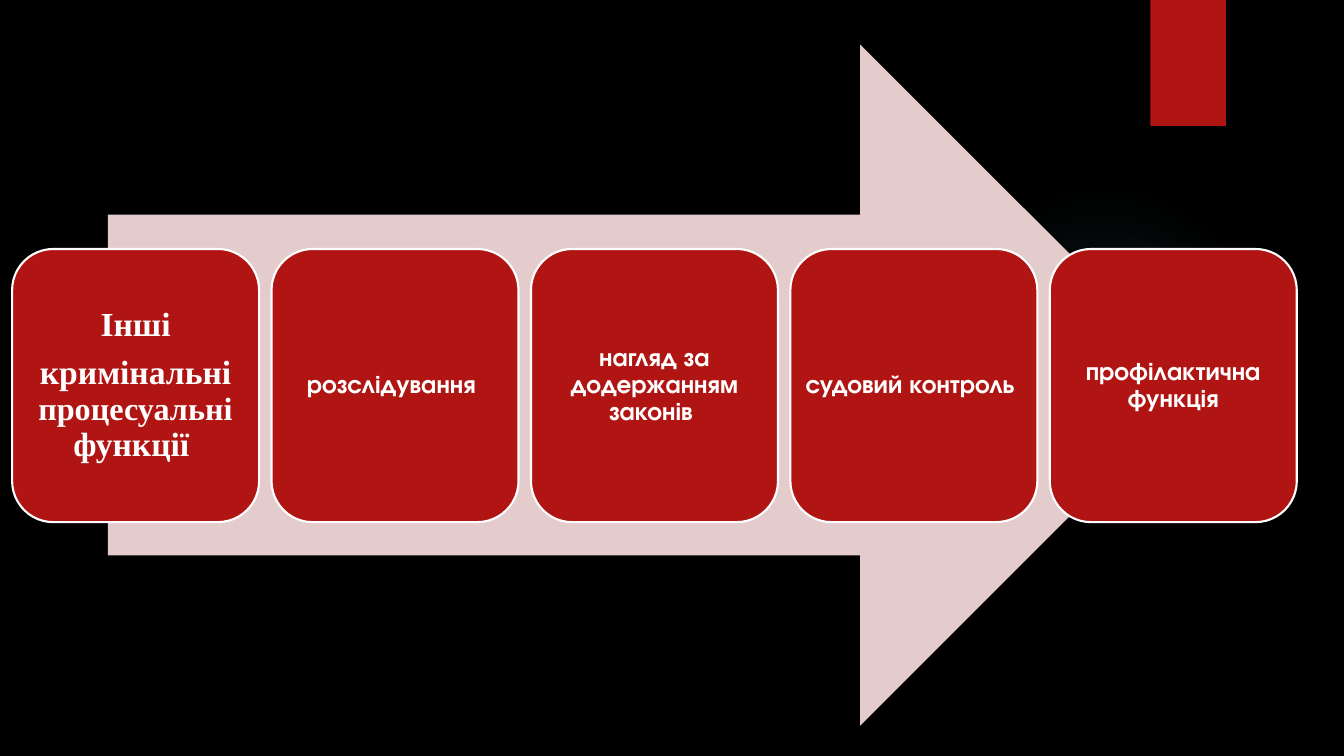
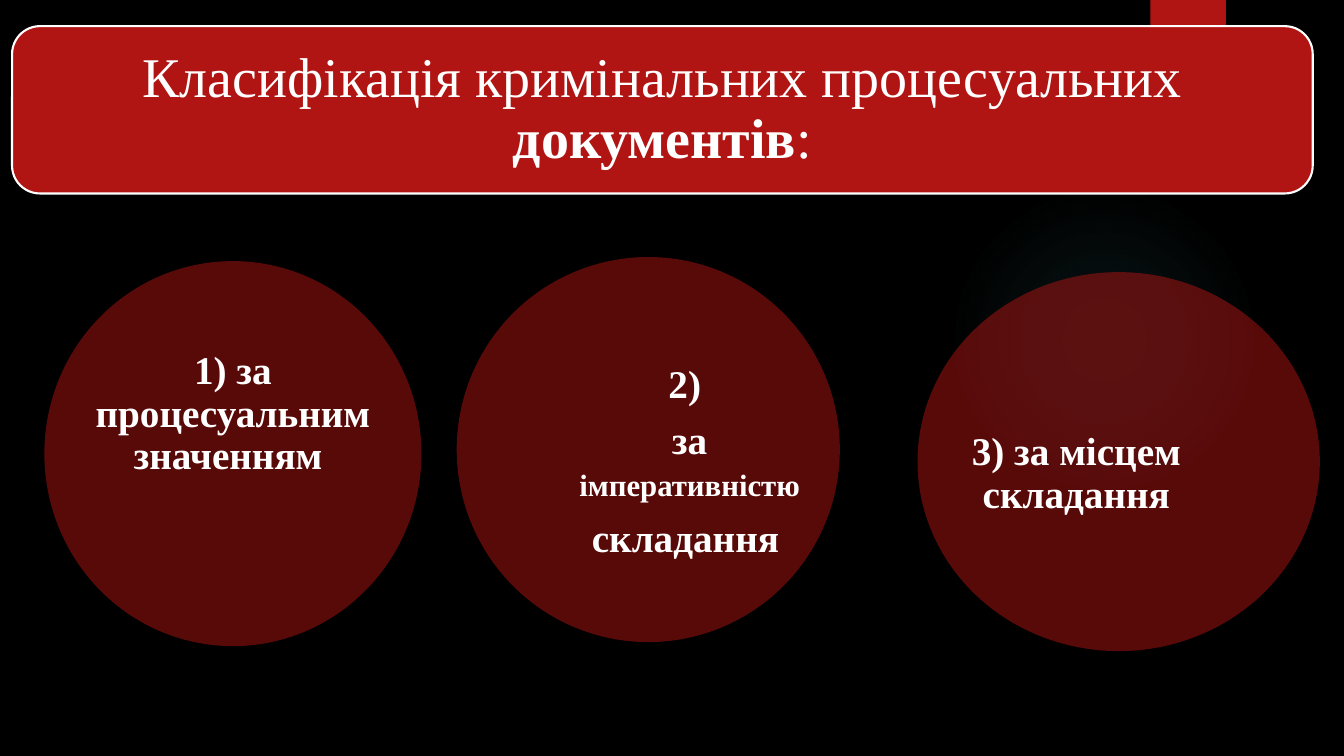
from lxml import etree
from pptx import Presentation
from pptx.dml.color import RGBColor
from pptx.enum.shapes import MSO_SHAPE
from pptx.enum.text import MSO_ANCHOR, MSO_AUTO_SIZE, PP_ALIGN
from pptx.oxml import parse_xml
from pptx.oxml.ns import qn
from pptx.util import Inches, Pt

RECT, ROUND = MSO_SHAPE.RECTANGLE, MSO_SHAPE.ROUNDED_RECTANGLE
OVAL, ARROW = MSO_SHAPE.OVAL, MSO_SHAPE.RIGHT_ARROW
MIDDLE, CENTER, NO_FIT = MSO_ANCHOR.MIDDLE, PP_ALIGN.CENTER, MSO_AUTO_SIZE.NONE

BLACK = RGBColor(0x00, 0x00, 0x00)
WHITE = RGBColor(0xFF, 0xFF, 0xFF)
RED = RGBColor(0xB0, 0x15, 0x13)
PINK = RGBColor(0xE4, 0xCC, 0xCC)
TEAL = RGBColor(0x50, 0xB9, 0xC1)
SERIF, SANS = "Times New Roman", "TeX Gyre Adventor"
NS = 'xmlns:a="http://schemas.openxmlformats.org/drawingml/2006/main"'

# Content: a text is a list of paragraphs, a paragraph a list of (text, size, bold)
STEPS = [
    (SERIF, [[("Інші", 24, True)],
             [("кримінальні ", 24, True), ("процесуальні", 23, True),
              (" функції ", 24, True)]]),
    (SANS, [[("розслідування ", 18, True)]]),
    (SANS, [[("нагляд за додержанням законів ", 18, True)]]),
    (SANS, [[("судовий контроль ", 18, True)]]),
    (SANS, [[("профілактична функція", 18, True)]]),
]
TITLE = [[("Класифікація кримінальних процесуальних ", 40, False),
          ("документів", 40, True), (":", 40, False)]]
# Circle place, text place, text
KINDS = [
    ((0.44, 2.59, 3.74, 3.82), (0.94, 3.25, 2.74, 1.72),
     [[("1) за процесуальним значенням ", 28, True)]]),
    ((4.53, 2.55, 3.8, 3.82), (5.7, 3.54, 2.28, 2.1),
     [[("2) ", 28, True)],
      [("за ", 28, True), ("імперативністю", 22, True), (" ", 28, True)],
      [("складання", 28, True), (" ", 24, True)]]),
    ((9.1, 2.7, 3.99, 3.76), (9.48, 3.67, 2.39, 2.07),
     [[("3) за місцем складання", 28, True)]]),
]
BANNER = (0.12, 0.26, 12.9, 1.66)


def place(box):
    return [Inches(v) for v in box]


def draw(slide, kind, box, color, edge=False):
    shape = slide.shapes.add_shape(kind, *place(box))
    shape.shadow.inherit = False
    shape.fill.solid()
    shape.fill.fore_color.rgb = color
    if edge:
        shape.line.color.rgb = WHITE
        shape.line.width = Pt(1.5)
    else:
        shape.line.fill.background()
    return shape


def write(shape, paras, font, inset=0):
    frame = shape.text_frame
    frame.word_wrap = True
    frame.auto_size = NO_FIT
    frame.vertical_anchor = MIDDLE
    frame.margin_left = frame.margin_right = Inches(inset)
    frame.margin_top = frame.margin_bottom = Inches(inset)
    for i, runs in enumerate(paras):
        para = frame.add_paragraph() if i else frame.paragraphs[0]
        para.alignment = CENTER
        para.line_spacing = 0.9
        para.space_before = Pt(0)
        para.space_after = Pt(round(0.35 * runs[0][1], 1))
        for text, size, bold in runs:
            run = para.add_run()
            run.text = text
            run.font.name = font
            run.font.size = Pt(size)
            run.font.bold = bold
            run.font.color.rgb = WHITE


def fade(shape, percent):
    color = shape.element.spPr.find(qn("a:solidFill"))[0]
    etree.SubElement(color, qn("a:alpha")).set("val", str(percent * 1000))


def dress(master, slide):
    """Put the soft glow and the red tab on the master."""
    glow = draw(slide, OVAL, (9.41, 1.83, 3.08, 3.08), TEAL)
    stops = "".join(
        f'<a:gs pos="{pos * 1000}"><a:srgbClr val="{TEAL}">'
        f'<a:alpha val="{alpha * 1000}"/></a:srgbClr></a:gs>'
        for pos, alpha in ((0, 7), (36, 6), (69, 0), (100, 0)))
    props = glow.element.spPr
    props.replace(props.find(qn("a:solidFill")), parse_xml(
        f'<a:gradFill {NS}><a:gsLst>{stops}</a:gsLst><a:path path="circle">'
        '<a:fillToRect l="50000" t="50000" r="50000" b="50000"/>'
        '</a:path></a:gradFill>'))

    tab = draw(slide, RECT, (11.41, 0, 0.75, 1.25), RED)
    tab.element.spPr.find(qn("a:effectLst")).append(parse_xml(
        f'<a:outerShdw {NS} blurRad="{Pt(3)}" dist="{Pt(2)}" dir="5400000">'
        f'<a:srgbClr val="{BLACK}"><a:alpha val="45000"/></a:srgbClr>'
        '</a:outerShdw>'))

    for num, shape in enumerate((glow, tab), 20):
        shape.element.nvSpPr.cNvPr.set("id", str(num))
        master.shapes.element.append(shape.element)


def steps(slide):
    draw(slide, ARROW, (1.07, 0.44, 10.84, 6.76), PINK)
    for i, (font, paras) in enumerate(STEPS):
        box = (0.12 + i * 2.573, 2.47, 2.45, 2.71)
        write(draw(slide, ROUND, box, RED, edge=True), paras, font)


def kinds(slide):
    # Title over its banner
    draw(slide, ROUND, BANNER, RED, edge=True)
    title = slide.shapes.title
    title.left, title.top, title.width, title.height = place(BANNER)
    write(title, TITLE, SERIF, 0.17)
    slide.shapes.element.append(title.element)

    # Circles with their labels
    for ring, label, paras in KINDS:
        fade(draw(slide, OVAL, ring, RED), 50)
        write(slide.shapes.add_textbox(*place(label)), paras, SERIF)


def main():
    prs = Presentation()
    prs.slide_width, prs.slide_height = Inches(13.33), Inches(7.5)
    master = prs.slide_master
    master.background.fill.solid()
    master.background.fill.fore_color.rgb = BLACK

    first = prs.slides.add_slide(prs.slide_layouts[6])
    dress(master, first)
    steps(first)
    kinds(prs.slides.add_slide(prs.slide_layouts[5]))
    prs.save("out.pptx")


if __name__ == "__main__":
    main()
